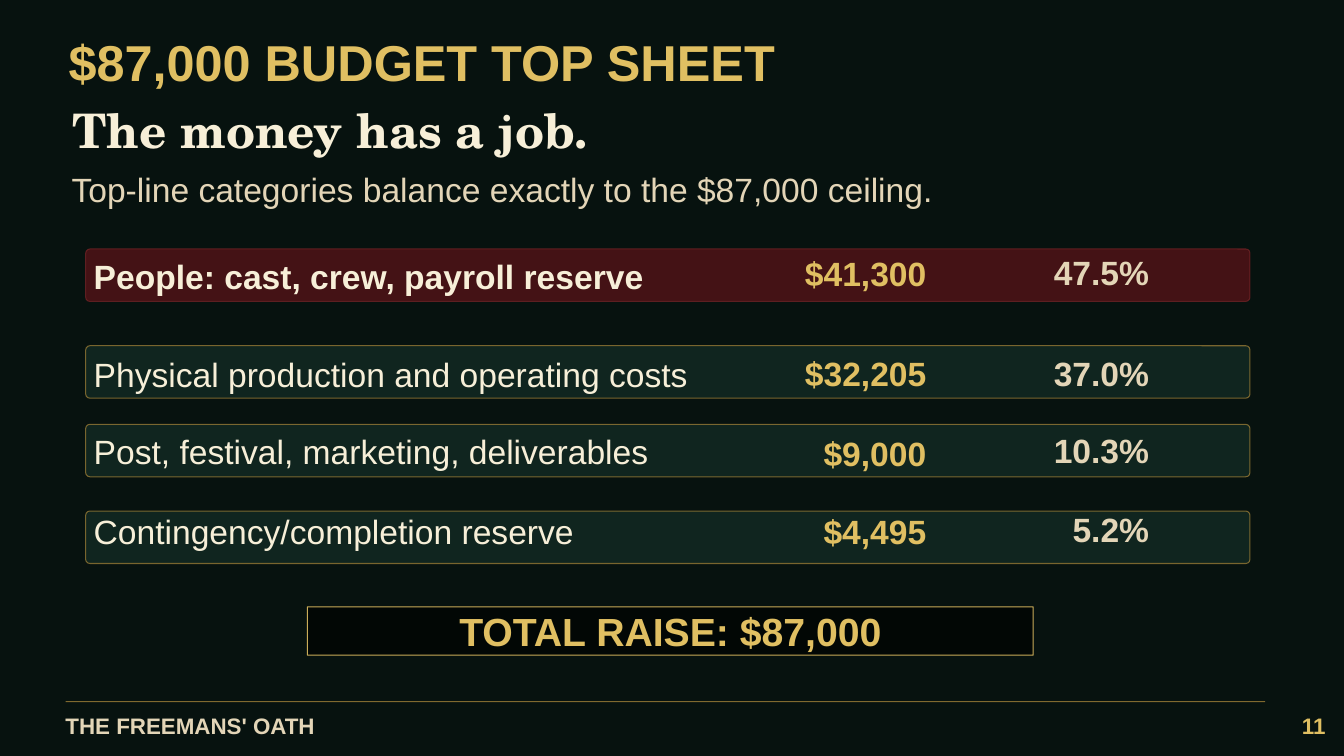
import dataclasses

import pptx
import pptx.dml.color
import pptx.enum.shapes
import pptx.enum.text
import pptx.oxml
import pptx.oxml.ns
import pptx.util

ALIGN = pptx.enum.text.PP_ALIGN
ANCHOR = pptx.enum.text.MSO_ANCHOR
SHAPE = pptx.enum.shapes.MSO_SHAPE
CELL = pptx.util.Inches(0.1)


@dataclasses.dataclass(frozen=True)
class Theme:
    sans: str = "Arial"
    serif: str = "TeX Gyre Schola"
    background: str = "07120F"
    gold: str = "E0BF62"
    cream: str = "F7EFD8"
    sand: str = "E3D5B7"
    brass: str = "A9873A"
    panel: str = "10251F"
    maroon: str = "441215"
    crimson: str = "7A2528"
    total_fill: str = "020705"
    title_size: float = 36
    tagline_size: float = 34
    total_size: float = 28
    body_size: float = 24
    footer_size: float = 16
    rule_width: float = 0.75
    total_width: float = 0.8


@dataclasses.dataclass(frozen=True)
class Box:
    left: float
    top: float
    width: float
    height: float

    def inset(self, column, row, columns, rows):
        return Box(self.left + column, self.top + row, columns, rows)

    def emu(self):
        return [round(cells * CELL) for cells in dataclasses.astuple(self)]


@dataclasses.dataclass(frozen=True)
class Category:
    label: str
    amount: str
    share: str
    top: float
    text_drops: tuple
    featured: bool = False


THEME = Theme()
SLIDE = Box(0, 0, 133.33, 75)
CATEGORIES = [
    Category("People: cast, crew, payroll reserve", "$41,300", "47.5%", 0, (0.7, 0.4, 0.3), True),
    Category("Physical production and operating costs", "$32,205", "37.0%", 9.6, (0.8, 0.7, 0.7)),
    Category("Post, festival, marketing, deliverables", "$9,000", "10.3%", 17.4, (0.6, 0.8, 0.5)),
    Category("Contingency/completion reserve", "$4,495", "5.2%", 26, (0, 0, -0.2)),
]


def rgb(color):
    return pptx.dml.color.RGBColor.from_string(color)


def style_line(shape, color, width, opacity):
    shape.line.color.rgb = rgb(color)
    shape.line.width = pptx.util.Pt(width)
    outline = shape._element.spPr.find(pptx.oxml.ns.qn("a:ln"))
    solid = outline.find(pptx.oxml.ns.qn("a:solidFill"))
    alpha = pptx.oxml.parse_xml(f'<a:alpha {pptx.oxml.ns.nsdecls("a")} val="{opacity * 1000}"/>')
    solid[0].append(alpha)


def write(shape, text, size, color, bold=True, font=THEME.sans, align=ALIGN.LEFT, anchor=ANCHOR.MIDDLE):
    frame = shape.text_frame
    frame.text = text
    frame.word_wrap = True
    frame.auto_size = pptx.enum.text.MSO_AUTO_SIZE.NONE
    frame.vertical_anchor = anchor
    frame.margin_left = frame.margin_top = frame.margin_right = frame.margin_bottom = 0
    paragraph = frame.paragraphs[0]
    paragraph.alignment = align
    style = paragraph.runs[0].font
    style.name, style.size, style.bold = font, pptx.util.Pt(size), bold
    style.color.rgb = rgb(color)


def add_text(slide, box, *content, **style):
    write(slide.shapes.add_textbox(*box.emu()), *content, **style)


def add_panel(slide, box, kind, fill, line, width, opacity):
    panel = slide.shapes.add_shape(kind, *box.emu())
    panel.shadow.inherit = False
    panel.fill.solid()
    panel.fill.fore_color.rgb = rgb(fill)
    style_line(panel, line, width, opacity)
    return panel


def add_heading(slide, box):
    title = slide.shapes.title
    title.left, title.top, title.width, title.height = box.inset(0, 0, 118.7, 7.2).emu()
    write(title, "$87,000 BUDGET TOP SHEET", THEME.title_size, THEME.gold)
    add_text(slide, box.inset(0.4, 6.7, 58, 7.2), "The money has a job.",
             THEME.tagline_size, THEME.cream, font=THEME.serif)
    add_text(slide, box.inset(0.3, 14.3, 117.7, 4.1),
             "Top-line categories balance exactly to the $87,000 ceiling.",
             THEME.body_size, THEME.sand, bold=False, anchor=ANCHOR.TOP)


def add_category(slide, box, category):
    fill, line = (THEME.maroon, THEME.crimson) if category.featured else (THEME.panel, THEME.brass)
    bar = add_panel(slide, box, SHAPE.ROUNDED_RECTANGLE, fill, line, THEME.rule_width, 70)
    bar.adjustments[0] = 0.08
    columns = [
        (category.label, 0.8, 62, THEME.cream, category.featured, ALIGN.LEFT),
        (category.amount, 67.4, 16, THEME.gold, True, ALIGN.RIGHT),
        (category.share, 93.5, 12, THEME.sand, True, ALIGN.RIGHT),
    ]
    for (text, column, width, color, bold, align), drop in zip(columns, category.text_drops):
        add_text(slide, box.inset(column, drop, width, 4.1), text, THEME.body_size, color,
                 bold=bold, align=align, anchor=ANCHOR.TOP)


def add_budget(slide, box):
    for category in CATEGORIES:
        add_category(slide, box.inset(0, category.top, box.width, 5.2), category)


def add_total(slide, box):
    total = add_panel(slide, box, SHAPE.RECTANGLE, THEME.total_fill, THEME.gold, THEME.total_width, 90)
    write(total, "TOTAL RAISE: $87,000", THEME.total_size, THEME.gold, align=ALIGN.CENTER)


def add_footer(slide, box):
    left, top, width, _ = box.inset(0, 0, 119, 0).emu()
    rule = slide.shapes.add_connector(
        pptx.enum.shapes.MSO_CONNECTOR.STRAIGHT, left, top, left + width, top)
    style_line(rule, THEME.brass, THEME.rule_width, 75)
    rule._element.spPr.append(
        pptx.oxml.parse_xml(f'<a:effectLst {pptx.oxml.ns.nsdecls("a")}/>'))
    add_text(slide, box.inset(0, 1, 42, 2.8), "THE FREEMANS' OATH", THEME.footer_size, THEME.sand)
    add_text(slide, box.inset(box.width - 8, 1, 8, 2.8), "11",
             THEME.footer_size, THEME.gold, align=ALIGN.RIGHT)


def add_budget_slide(deck, box):
    slide = deck.slides.add_slide(deck.slide_layouts.get_by_name("Title Only"))
    slide.background.fill.solid()
    slide.background.fill.fore_color.rgb = rgb(THEME.background)
    add_heading(slide, box.inset(6.8, 2.5, 118.7, 18.4))
    add_budget(slide, box.inset(8.5, 24.7, 115.5, 31.2))
    add_total(slide, box.inset(30.5, 60.2, 72, 4.8))
    add_footer(slide, box.inset(6.5, 69.6, 125, 3.8))


def main():
    deck = pptx.Presentation()
    deck.slide_width, deck.slide_height = SLIDE.emu()[2:]
    add_budget_slide(deck, SLIDE)
    deck.save("out.pptx")


if __name__ == "__main__":
    main()
